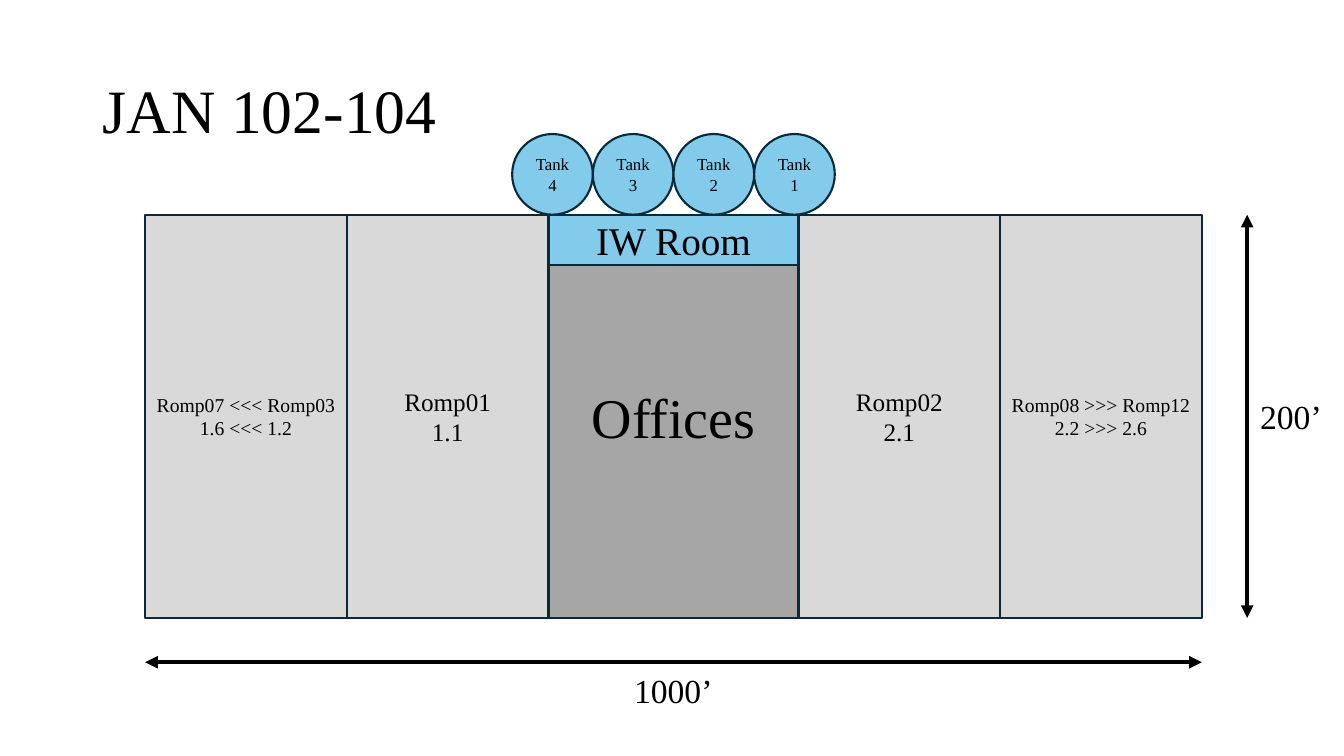
"""Builds the JAN 102-104 building plan slide."""
from dataclasses import dataclass

from lxml.etree import SubElement
from pptx import Presentation
from pptx.dml.color import RGBColor
from pptx.enum.shapes import MSO_CONNECTOR as Connector, MSO_SHAPE as Shape
from pptx.enum.text import MSO_ANCHOR as Anchor, MSO_AUTO_SIZE as AutoSize, PP_ALIGN as Align
from pptx.oxml.ns import qn
from pptx.util import Inches, Pt


@dataclass(frozen=True)
class Theme:
    """Colours, font and type sizes of the slide."""
    font: str = "Times New Roman"
    ink: str = "000000"
    outline: str = "092A39"
    bay: str = "D9D9D9"
    office: str = "A6A6A6"
    water: str = "83CBEB"
    title: int = 44
    office_size: int = 40
    room: int = 28
    dimension: int = 24
    bay_size: int = 18
    range_size: int = 14
    tank: int = 12
    outline_width: float = 1.5
    arrow_width: float = 3


THEME = Theme()
PAGE_WIDTH, PAGE_HEIGHT = 13.33, 7.5
BAY_WIDTH, OFFICE_WIDTH = 2, 2.48
LEFT, TOP, HEIGHT = 1.44, 2.13, 4
ROOM_HEIGHT, TANK_SIZE = 0.5, 0.8
OFFICE_LEFT = LEFT + 2 * BAY_WIDTH
OFFICE_RIGHT = OFFICE_LEFT + OFFICE_WIDTH
RIGHT = OFFICE_RIGHT + 2 * BAY_WIDTH
BOTTOM = TOP + HEIGHT
MIDDLE = (LEFT + RIGHT) / 2

BAYS = (
    (OFFICE_RIGHT, ("Romp02", "2.1"), THEME.bay_size),
    (OFFICE_RIGHT + BAY_WIDTH, ("Romp08 >>> Romp12", "2.2 >>> 2.6"), THEME.range_size),
    (LEFT + BAY_WIDTH, ("Romp01", "1.1"), THEME.bay_size),
    (LEFT, ("Romp07 <<< Romp03", "1.6 <<< 1.2"), THEME.range_size),
)
TANKS = ("Tank 4", "Tank 3", "Tank 2", "Tank 1")


def write(frame, lines, size, align=Align.LEFT, anchor=Anchor.MIDDLE):
    """Fill a text frame with one paragraph for each line."""
    frame.word_wrap = True
    frame.vertical_anchor = anchor
    for index, line in enumerate(lines):
        para = frame.add_paragraph() if index else frame.paragraphs[0]
        para.text = line
        para.alignment = align
        para.font.name = THEME.font
        para.font.size = Pt(size)
        para.font.color.rgb = RGBColor.from_string(THEME.ink)


def add_title(page, text):
    """Place and format the title placeholder."""
    title = page.shapes.title
    title.left, title.top = Inches(0.92), Inches(0.4)
    title.width, title.height = Inches(3.52), Inches(1.45)
    write(title.text_frame, (text,), THEME.title)
    title.text_frame.auto_size = AutoSize.NONE
    title.text_frame.paragraphs[0].line_spacing = 0.9


def add_area(page, kind, bounds, lines, fill, size):
    """Draw an outlined part of the building with a centred label."""
    area = page.shapes.add_shape(kind, *map(Inches, bounds))
    area.shadow.inherit = False
    area.fill.solid()
    area.fill.fore_color.rgb = RGBColor.from_string(fill)
    area.line.color.rgb = RGBColor.from_string(THEME.outline)
    area.line.width = Pt(THEME.outline_width)
    write(area.text_frame, lines, size, Align.CENTER)


def add_dimension_arrow(page, start, end):
    """Draw a line with an arrowhead at both ends."""
    arrow = page.shapes.add_connector(Connector.STRAIGHT, *map(Inches, start + end))
    arrow.line.color.rgb = RGBColor.from_string(THEME.ink)
    arrow.line.width = Pt(THEME.arrow_width)
    outline = arrow.line._get_or_add_ln()
    for tag in ("a:headEnd", "a:tailEnd"):
        SubElement(outline, qn(tag)).set("type", "triangle")
    SubElement(arrow._element.spPr, qn("a:effectLst"))


def add_dimension_label(page, bounds, text):
    """Write the length beside a dimension arrow."""
    box = page.shapes.add_textbox(*map(Inches, bounds))
    write(box.text_frame, (text,), THEME.dimension, anchor=Anchor.TOP)
    box.text_frame.auto_size = AutoSize.SHAPE_TO_FIT_TEXT


def main():
    """Build and save the slide."""
    deck = Presentation()
    deck.slide_width, deck.slide_height = Inches(PAGE_WIDTH), Inches(PAGE_HEIGHT)
    page = deck.slides.add_slide(deck.slide_layouts.get_by_name("Title Only"))
    add_title(page, "JAN 102-104")

    add_area(page, Shape.RECTANGLE, (OFFICE_LEFT, TOP, OFFICE_WIDTH, HEIGHT),
             ("Offices",), THEME.office, THEME.office_size)
    for left, lines, size in BAYS:
        add_area(page, Shape.RECTANGLE, (left, TOP, BAY_WIDTH, HEIGHT),
                 lines, THEME.bay, size)
    add_area(page, Shape.RECTANGLE, (OFFICE_LEFT, TOP, OFFICE_WIDTH, ROOM_HEIGHT),
             ("IW Room",), THEME.water, THEME.room)

    tanks_left = MIDDLE - len(TANKS) * TANK_SIZE / 2
    for index, name in enumerate(TANKS):
        bounds = (tanks_left + index * TANK_SIZE, TOP - TANK_SIZE, TANK_SIZE, TANK_SIZE)
        add_area(page, Shape.OVAL, bounds, (name,), THEME.water, THEME.tank)

    width_line, depth_line = BOTTOM + 0.44, RIGHT + 0.45
    add_dimension_arrow(page, (LEFT, width_line), (RIGHT, width_line))
    add_dimension_arrow(page, (depth_line, TOP), (depth_line, BOTTOM))
    add_dimension_label(page, (MIDDLE - 0.49, width_line + 0.03, 1, 0.5), "1000’")
    add_dimension_label(page, (depth_line + 0.03, TOP + 1.75, 0.83, 0.5), "200’")
    deck.save("out.pptx")


if __name__ == "__main__":
    main()
